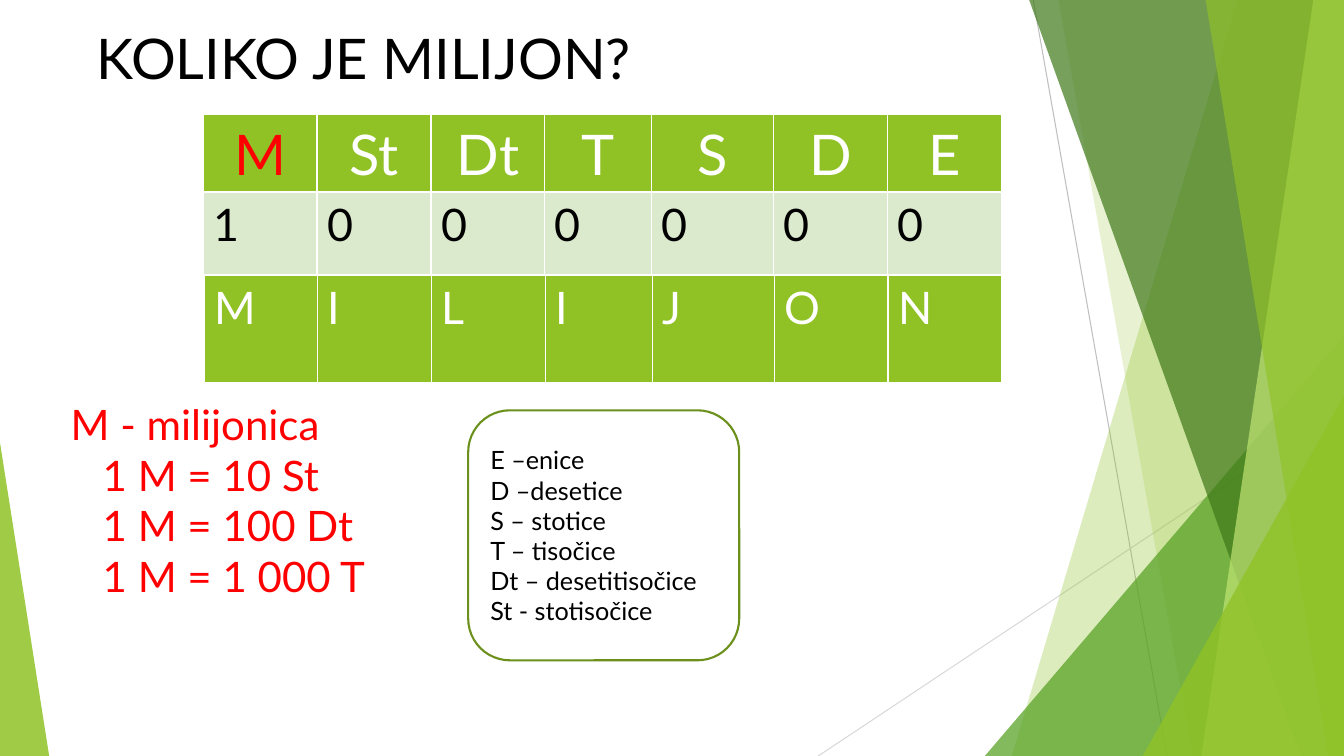
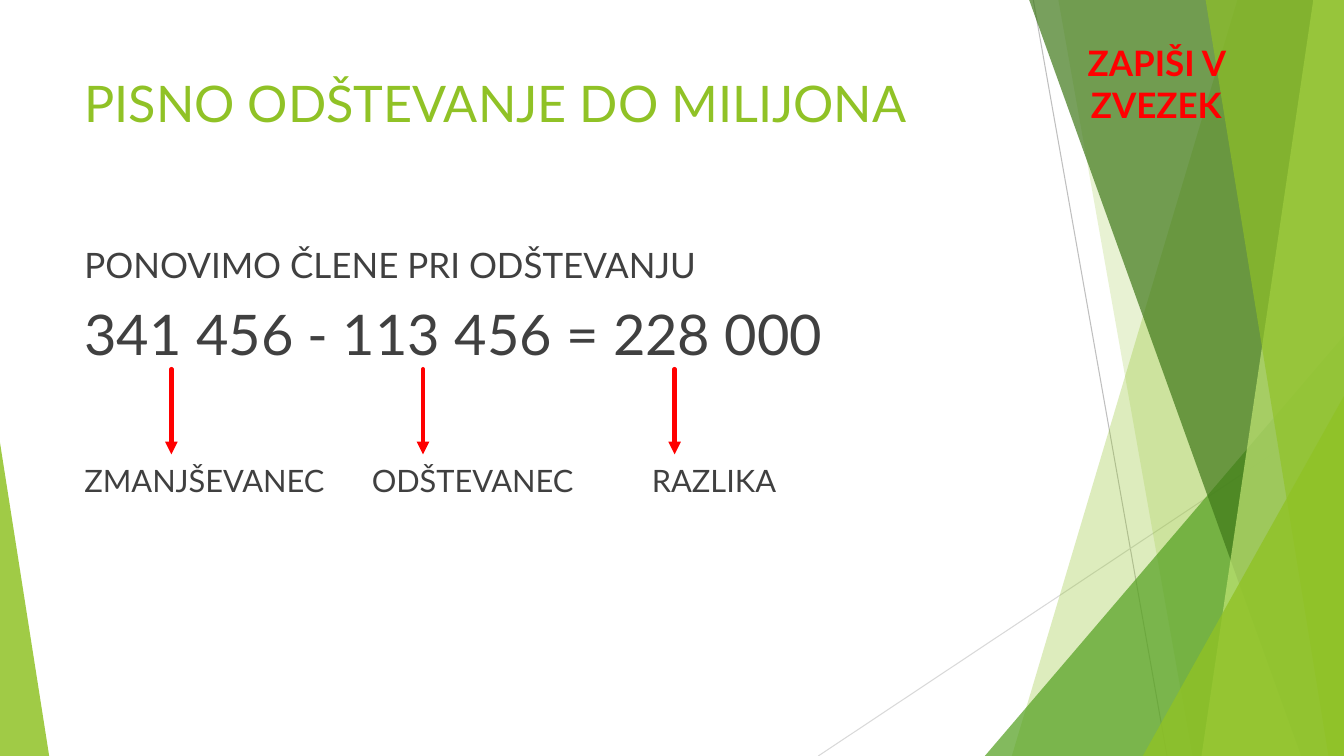
from lxml import etree
from pptx import Presentation
from pptx.dml.color import RGBColor
from pptx.enum import shapes as es, text as et
from pptx.oxml import ns
from pptx.util import Cm, Pt

WIDE, HIGH = 33.87, 19.05
FONT = "Lato"
HUES = {
    "lime": "90C226", "green": "54A021", "dark": "3F7819", "pale": "C0E474",
    "mint": "DBE9CD", "edge": "6B901C", "red": "FF0000", "black": "000000",
    "white": "FFFFFF", "ink": "404040", "grey": "BFBFBF", "mist": "D9D9D9",
}


def hue(name):
    return RGBColor.from_string(HUES[name])


def sub(node, tag, **attrs):
    return etree.SubElement(node, ns.qn(tag), **attrs)


def style(par, size, color, bold=False, align=None):
    par.font.name, par.font.size, par.font.bold = FONT, Pt(size), bold
    par.font.color.rgb = hue(color)
    par.alignment = align


def write(frame, lines, size, color, **more):
    """Fill a text frame, one paragraph for each line, and return them."""
    frame.word_wrap = True
    pars = []
    for i, line in enumerate(lines):
        par = frame.paragraphs[0] if i == 0 else frame.add_paragraph()
        par.text = line
        style(par, size, color, **more)
        pars.append(par)
    return pars


def label(slide, box, lines, size, color):
    frame = slide.shapes.add_textbox(*map(Cm, box)).text_frame
    return write(frame, lines, size, color)


def panel(slide, box, lines, size, color, edge=None, **more):
    """Add an unfilled rounded box holding text."""
    shape = slide.shapes.add_shape(
        es.MSO_SHAPE.ROUNDED_RECTANGLE, *map(Cm, box))
    shape.shadow.inherit = False
    shape.fill.background()
    if edge:
        shape.line.color.rgb, shape.line.width = hue(edge), Pt(1.5)
    else:
        shape.line.fill.background()
    shape.text_frame.vertical_anchor = et.MSO_ANCHOR.MIDDLE
    more.setdefault("align", et.PP_ALIGN.LEFT)
    write(shape.text_frame, lines, size, color, **more)


def line(slide, ends, color, width, arrow=False):
    link = slide.shapes.add_connector(
        es.MSO_CONNECTOR.STRAIGHT, *map(Cm, ends))
    link.line.color.rgb, link.line.width = hue(color), Pt(width)
    if arrow:
        node = link.line._get_or_add_ln()
        node.set("cap", "rnd")
        sub(node, "a:tailEnd", type="triangle")
    sub(link._element.spPr, "a:effectLst")


def tint(shape, color, alpha):
    """Fill without outline; alpha is the opacity in percent."""
    shape.shadow.inherit = False
    shape.line.fill.background()
    shape.fill.solid()
    shape.fill.fore_color.rgb = hue(color)
    node = shape._element.spPr.find(".//" + ns.qn("a:srgbClr"))
    sub(node, "a:alpha", val=str(alpha * 1000))


def band(slide, top, foot, color, alpha):
    """Fill from a slanted edge to the right side of the slide."""
    pen = slide.shapes.build_freeform(Cm(top), Cm(-0.02))
    pen.add_line_segments(
        [(Cm(x), Cm(y))
         for x, y in ((WIDE, -0.02), (WIDE, HIGH), (foot, HIGH))])
    tint(pen.convert_to_shape(), color, alpha)


def wedge(slide, left, top, width, peak, color, alpha):
    """Add a right-angled triangle that stands on the slide's foot."""
    shape = slide.shapes.add_shape(
        es.MSO_SHAPE.ISOSCELES_TRIANGLE,
        Cm(left), Cm(top), Cm(width), Cm(HIGH - top))
    shape.adjustments[0] = peak
    tint(shape, color, alpha)


def decor(slide):
    line(slide, (26.04, 0, 29.41, HIGH), "grey", 0.75)
    line(slide, (WIDE, 10.24, 20.62, HIGH), "mist", 0.75)
    band(slide, 31.19, 25.5, "lime", 30)
    band(slide, 26.67, 30.05, "lime", 20)
    wedge(slide, 24.82, 8.46, WIDE - 24.82, 1, "green", 72)
    band(slide, 25.93, 32.79, "dark", 70)
    band(slide, 33.1, 30.28, "pale", 70)
    band(slide, 30.38, 33.48, "lime", 65)
    wedge(slide, 28.8, 9.98, WIDE - 28.8, 1, "lime", 80)
    wedge(slide, 0, 11.15, 1.24, 0, "lime", 85)


def table(slide, left, top, rows):
    """Add a place value table; a row is height, words, fill, size, colour
    and alignment."""
    cols = (2.87, 2.87, 2.87, 2.69, 3.07, 2.87, 2.87)
    grid = slide.shapes.add_table(
        len(rows), len(cols), Cm(left), Cm(top),
        Cm(sum(cols)), Cm(sum(row[0] for row in rows))).table
    grid.first_row = grid.horz_banding = False
    for col, width in zip(grid.columns, cols):
        col.width = Cm(width)
    for r, (height, words, fill, size, color, align) in enumerate(rows):
        grid.rows[r].height = Cm(height)
        for c, word in enumerate(words):
            cell = grid.cell(r, c)
            cell.fill.solid()
            cell.fill.fore_color.rgb = hue(fill)
            cell.text = word
            style(cell.text_frame.paragraphs[0], size, color, align=align)
    return grid


def places(slide, left, top):
    """Add the places with their digits, and the word over the lower edge."""
    mid, start = et.PP_ALIGN.CENTER, et.PP_ALIGN.LEFT
    heads = ("M", "St", "Dt", "T", "S", "D", "E")
    grid = table(slide, left, top, [
        (1.93, heads, "lime", 40, "white", mid),
        (2.72, "1000000", "mint", 32, "black", start)])
    first = grid.cell(0, 0).text_frame.paragraphs[0]
    first.font.color.rgb = hue("red")
    table(slide, left + 0.02, top + 4.04,
          [(2.72, "MILIJON", "lime", 32, "white", start)])


def terms(slide, left, top):
    """Add the sum, with an arrow from each number to its name."""
    head, total, names = label(
        slide, (left, top, 23.88, 10.77),
        ["PONOVIMO ČLENE PRI ODŠTEVANJU", "341 456 - 113 456 = 228 000",
         "ZMANJŠEVANEC\tODŠTEVANEC\tRAZLIKA"], 25, "ink")
    total.font.size, names.font.size = Pt(40), Pt(22)
    total.space_before, names.space_before = Pt(10), Pt(68)
    props = names._p.get_or_add_pPr()
    tabs = etree.Element(ns.qn("a:tabLst"))
    for stop in (7.24, 14.3):
        sub(tabs, "a:tab", pos=str(Cm(stop)), algn="l")
    props.find(ns.qn("a:defRPr")).addprevious(tabs)
    for i in range(3):
        x = left + 2.44 + 6.34 * i
        line(slide, (x, top + 3.29, x, top + 5.44), "red", 3, arrow=True)


def million(slide):
    places(slide, 5.12, 2.89)
    facts = label(
        slide, (1.53, 9.93, 8.92, 5.38),
        ["M - milijonica", "1 M = 10 St", "1 M = 100 Dt", "1 M = 1 000 T"],
        30, "red")
    for par in facts[1:]:
        par._p.get_or_add_pPr().set("marL", str(Cm(0.81)))
    label(slide, (2.18, 0.46, 24.71, 1.96), ["KOLIKO JE MILIJON?"],
          40, "black")
    panel(slide, (11.8, 10.34, 6.83, 6.3),
          ["E –enice", "D –desetice", "S – stotice", "T – tisočice",
           "Dt – desetitisočice", "St - stotisočice"],
          18, "black", edge="edge")


def minus(slide):
    label(slide, (1.88, 1.7, 23.88, 3.66), ["PISNO ODŠTEVANJE DO MILIJONA"],
          36, "lime")
    terms(slide, 1.88, 6.01)
    panel(slide, (26.41, 1.12, 5.46, 1.96), ["ZAPIŠI V ZVEZEK"],
          25, "red", bold=True, align=et.PP_ALIGN.CENTER)


def main():
    deck = Presentation()
    deck.slide_width, deck.slide_height = Cm(WIDE), Cm(HIGH)
    for build in (million, minus):
        slide = deck.slides.add_slide(deck.slide_layouts[6])
        decor(slide)
        build(slide)
    deck.save("out.pptx")


if __name__ == "__main__":
    main()
